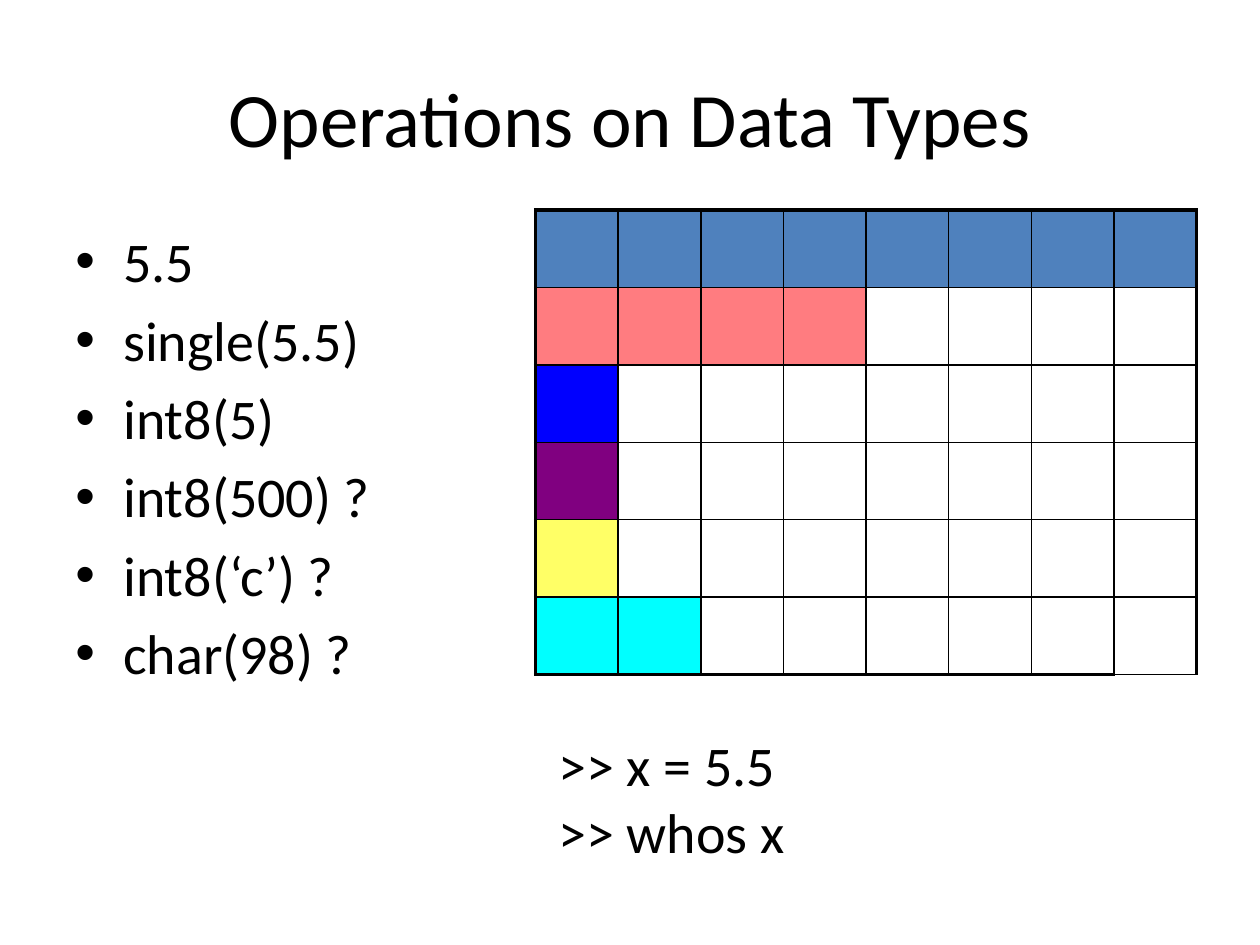
"""Build a slide comparing the storage sizes of numeric data types."""
from dataclasses import dataclass

import lxml.etree
import pptx
import pptx.dml.color
import pptx.enum.text
import pptx.oxml.ns
import pptx.util

RGBColor = pptx.dml.color.RGBColor
BLACK = RGBColor(0x00, 0x00, 0x00)
STEEL = RGBColor(0x4F, 0x81, 0xBD)
SALMON = RGBColor(0xFF, 0x7C, 0x80)
BLUE = RGBColor(0x00, 0x00, 0xFF)
PURPLE = RGBColor(0x80, 0x00, 0x80)
YELLOW = RGBColor(0xFF, 0xFF, 0x66)
CYAN = RGBColor(0x00, 0xFF, 0xFF)

FONT = "Calibri"
SLIDE_WIDTH = pptx.util.Inches(10)
SLIDE_HEIGHT = pptx.util.Inches(7.5)
GRID_COLUMNS = 120
GRID_ROWS = 90
BYTE_COLUMNS = 8
THIN = pptx.util.Pt(1)
THICK = pptx.util.Pt(2.25)
BULLET_INDENT = pptx.util.Inches(0.38)


@dataclass(frozen=True)
class Area:
    """A rectangle in columns and rows of the slide grid."""

    column: float
    row: float
    columns: float
    rows: float

    def lengths(self) -> tuple[int, int, int, int]:
        """Return left, top, width and height in slide units."""
        unit_x, unit_y = SLIDE_WIDTH / GRID_COLUMNS, SLIDE_HEIGHT / GRID_ROWS
        return (
            round(self.column * unit_x),
            round(self.row * unit_y),
            round(self.columns * unit_x),
            round(self.rows * unit_y),
        )


@dataclass(frozen=True)
class StoredValue:
    """An expression and the bytes that its value fills."""

    expression: str
    size: int
    color: RGBColor


TITLE_AREA = Area(6, 3.6, 108, 15)
LIST_AREA = Area(6, 21, 108, 59.4)
TABLE_AREA = Area(51, 20, 63, 44.25)
COMMAND_AREA = Area(52, 69, 43, 14)

VALUES = [
    StoredValue("5.5", 8, STEEL),
    StoredValue("single(5.5)", 4, SALMON),
    StoredValue("int8(5)", 1, BLUE),
    StoredValue("int8(500) ?", 1, PURPLE),
    StoredValue("int8(‘c’) ?", 1, YELLOW),
    StoredValue("char(98) ?", 2, CYAN),
]
COMMANDS = [">> x = 5.5", ">> whos x"]


def add_element(parent, tag: str, **attributes: str):
    """Append a DrawingML element to its parent."""
    return lxml.etree.SubElement(parent, pptx.oxml.ns.qn(tag), attributes)


def place(shape, area: Area) -> None:
    """Move and size a shape to an area."""
    shape.left, shape.top, shape.width, shape.height = area.lengths()


def format_font(paragraph, size: float) -> None:
    """Set the slide's font on a paragraph."""
    paragraph.font.name = FONT
    paragraph.font.size = pptx.util.Pt(size)
    paragraph.font.color.rgb = BLACK


def add_title(slide, text: str) -> None:
    """Fill and format the title placeholder."""
    title = slide.shapes.title
    place(title, TITLE_AREA)
    title.text_frame.text = text
    title.text_frame.vertical_anchor = pptx.enum.text.MSO_ANCHOR.MIDDLE
    paragraph = title.text_frame.paragraphs[0]
    paragraph.alignment = pptx.enum.text.PP_ALIGN.CENTER
    format_font(paragraph, 44)


def add_lines(slide, area: Area, lines: list[str]) -> list:
    """Add a wrapped text box and return its paragraphs."""
    frame = slide.shapes.add_textbox(*area.lengths()).text_frame
    frame.word_wrap = True
    frame.text = "\n".join(lines)
    for paragraph in frame.paragraphs:
        format_font(paragraph, 32)
    return list(frame.paragraphs)


def add_bullet(paragraph) -> None:
    """Give a paragraph a hanging bullet and space before it."""
    properties = paragraph._p.get_or_add_pPr()
    properties.set("marL", str(BULLET_INDENT))
    properties.set("indent", str(-BULLET_INDENT))
    spacing = lxml.etree.Element(pptx.oxml.ns.qn("a:spcBef"))
    add_element(spacing, "a:spcPct", val="20000")
    properties.insert(0, spacing)
    bullet_font = lxml.etree.Element(pptx.oxml.ns.qn("a:buFont"), typeface="Arial")
    bullet = lxml.etree.Element(pptx.oxml.ns.qn("a:buChar"), char="•")
    properties.insert(1, bullet_font)
    properties.insert(2, bullet)


def set_borders(cell, widths: dict[str, int]) -> None:
    """Draw solid black borders of the given widths on a cell."""
    properties = cell._tc.get_or_add_tcPr()
    for side, width in widths.items():
        line = add_element(properties, f"a:ln{side}", w=str(width))
        fill = add_element(line, "a:solidFill")
        add_element(fill, "a:srgbClr", val=str(BLACK))


def add_byte_table(slide, values: list[StoredValue]) -> None:
    """Add a table with one row per value and one column per byte."""
    frame = slide.shapes.add_table(len(values), BYTE_COLUMNS, *TABLE_AREA.lengths())
    table = frame.table
    table.first_row = table.horz_banding = False
    last_row, last_column = len(values) - 1, BYTE_COLUMNS - 1
    for row, value in enumerate(values):
        for column in range(BYTE_COLUMNS):
            cell = table.cell(row, column)
            thick_bottom = row == last_row and column < last_column
            set_borders(cell, {
                "L": THICK if column == 0 else THIN,
                "R": THICK if column == last_column else THIN,
                "T": THICK if row == 0 else THIN,
                "B": THICK if thick_bottom else THIN,
            })
            if column < value.size:
                cell.fill.solid()
                cell.fill.fore_color.rgb = value.color
            else:
                cell.fill.background()


def main() -> None:
    """Build and save the presentation."""
    presentation = pptx.Presentation()
    presentation.slide_width = SLIDE_WIDTH
    presentation.slide_height = SLIDE_HEIGHT
    slide = presentation.slides.add_slide(presentation.slide_layouts[5])
    add_title(slide, "Operations on Data Types")
    for paragraph in add_lines(slide, LIST_AREA, [value.expression for value in VALUES]):
        add_bullet(paragraph)
    add_byte_table(slide, VALUES)
    add_lines(slide, COMMAND_AREA, COMMANDS)
    presentation.save("out.pptx")


if __name__ == "__main__":
    main()
